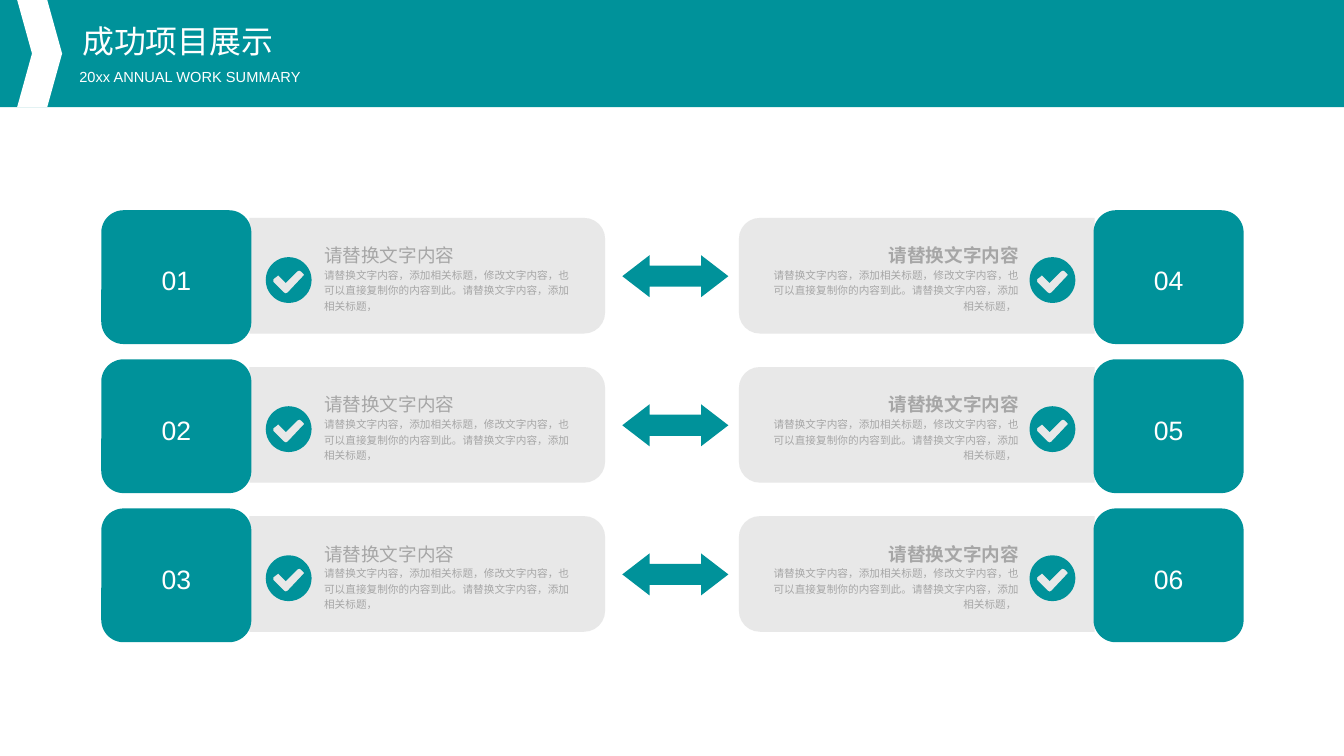
import math

from lxml import etree
from pptx import Presentation
from pptx.dml.color import RGBColor
from pptx.enum import shapes, text
from pptx.oxml.ns import qn
from pptx.util import Inches, Pt

TITLE = "成功项目展示"
SUBTITLE = "20xx ANNUAL WORK SUMMARY"
ITEM_TITLE = "请替换文字内容"
ITEM_BODY = "请替换文字内容，添加相关标题，修改文字内容，也可以直接复制你的内容到此。请替换文字内容，添加相关标题，"
ROWS = [("01", "04"), ("02", "05"), ("03", "06")]

TEAL = RGBColor(0x00, 0x92, 0x9A)
WHITE = RGBColor(0xFF, 0xFF, 0xFF)
PANEL_GRAY = RGBColor(0xE6, 0xE6, 0xE6)
TEXT_GRAY = RGBColor(0xA6, 0xA6, 0xA6)

SLIDE_WIDTH, SLIDE_HEIGHT = 14.06, 7.91
HEADER_HEIGHT = 1.12
FIRST_ROW, ROW_PITCH = 2.2, 1.56
TILE_WIDTH, TILE_HEIGHT = 1.57, 1.4
PANEL_WIDTH, PANEL_HEIGHT, PANEL_RADIUS = 3.72, 1.21, 0.22
ICON_RADIUS = 0.24
UNITS_PER_INCH = 1000  # freeform points are whole numbers
# Tick outline, measured from the centre of its disc
TICK = [(0.16, -0.06), (0.13, -0.09), (0.11, -0.1), (0.09, -0.09),
        (-0.03, 0.03), (-0.1, -0.04), (-0.11, -0.05), (-0.12, -0.04),
        (-0.16, -0.01), (-0.16, 0.02), (-0.05, 0.13), (-0.03, 0.14),
        (-0.01, 0.13), (0.15, -0.04), (0.16, -0.05)]

presentation = Presentation()
presentation.slide_width = Inches(SLIDE_WIDTH)
presentation.slide_height = Inches(SLIDE_HEIGHT)
slide = presentation.slides.add_slide(presentation.slide_layouts[6])


def paint(shape, color):
    shape.shadow.inherit = False
    shape.fill.solid()
    shape.fill.fore_color.rgb = color
    shape.line.fill.background()
    return shape


def add_preset(kind, left, top, width, height, color, adjustments=()):
    shape = slide.shapes.add_shape(
        kind, Inches(left), Inches(top), Inches(width), Inches(height))
    for index, value in enumerate(adjustments):
        shape.adjustments[index] = value
    return paint(shape, color)


def add_outline(contours, color):
    """Draw closed contours as one shape; an inner contour is a hole."""
    first, *others = [[(x * UNITS_PER_INCH, y * UNITS_PER_INCH)
                       for x, y in contour] for contour in contours]
    builder = slide.shapes.build_freeform(
        *first[0], scale=Inches(1) / UNITS_PER_INCH)
    builder.add_line_segments(first[1:])
    for contour in others:
        builder.move_to(*contour[0])
        builder.add_line_segments(contour[1:])
    return paint(builder.convert_to_shape(), color)


def arc(center_x, center_y, radius, start, end, steps):
    angles = [math.radians(start + (end - start) * step / steps)
              for step in range(steps + 1)]
    return [(center_x + radius * math.cos(angle),
             center_y + radius * math.sin(angle)) for angle in angles]


def write(shape, runs, color=WHITE, align=text.PP_ALIGN.LEFT, spacing=0.9,
          before=0, after=0, anchor=text.MSO_ANCHOR.TOP):
    """Fill a shape with one line per (text, size, bold, font) run."""
    frame = shape.text_frame
    frame.word_wrap = True
    frame.vertical_anchor = anchor
    frame.margin_left = frame.margin_right = 0
    frame.margin_top = frame.margin_bottom = 0
    paragraph = frame.paragraphs[0]
    paragraph.alignment = align
    paragraph.line_spacing = spacing
    paragraph.space_before, paragraph.space_after = Pt(before), Pt(after)
    for index, (words, size, bold, font) in enumerate(runs):
        if index:
            paragraph.add_line_break()
        run = paragraph.add_run()
        run.text = words
        run.font.size, run.font.bold, run.font.name = Pt(size), bold, font
        run.font.color.rgb = color


def add_text(left, top, width, height, runs, **style):
    box = slide.shapes.add_textbox(
        Inches(left), Inches(top), Inches(width), Inches(height))
    write(box, runs, **style)
    box.text_frame.auto_size = text.MSO_AUTO_SIZE.SHAPE_TO_FIT_TEXT


def add_panel(left, top, on_right):
    """Draw a panel whose corners are rounded on the side facing the arrow."""
    right, bottom = left + PANEL_WIDTH, top + PANEL_HEIGHT
    radius = PANEL_RADIUS
    outline = ([(left, top)]
               + arc(right - radius, top + radius, radius, -90, 0, 6)
               + arc(right - radius, bottom - radius, radius, 0, 90, 6)
               + [(left, bottom)])
    if on_right:
        outline = [(left + right - x, y) for x, y in outline]
    panel = add_outline([outline], PANEL_GRAY)
    color = panel.element.spPr.find(qn("a:solidFill"))[0]
    etree.SubElement(color, qn("a:alpha"), val="90000")


def add_check_icon(left, top):
    center_x, center_y = left + ICON_RADIUS, top + ICON_RADIUS
    disc = arc(center_x, center_y, ICON_RADIUS, 0, 350, 35)
    tick = [(center_x + x, center_y + y) for x, y in TICK]
    add_outline([disc, tick], TEAL)


def add_item(number, row_top, on_right):
    tile_left, panel_left, icon_left, text_left = (
        (11.44, 7.73, 10.77, 8.08) if on_right else (1.06, 2.61, 2.78, 3.39))
    add_panel(panel_left, row_top + 0.08, on_right)
    add_check_icon(icon_left, row_top + 0.49)
    add_text(text_left, row_top + 0.31, 2.58, 0.77,
             [(ITEM_TITLE, 14, on_right, "Arial"),
              (ITEM_BODY + (" " if on_right else ""), 8, False, "Arial")],
             color=TEXT_GRAY, spacing=1.2, before=2.8,
             align=text.PP_ALIGN.RIGHT if on_right else text.PP_ALIGN.LEFT)
    tile = add_preset(shapes.MSO_SHAPE.ROUNDED_RECTANGLE, tile_left, row_top,
                      TILE_WIDTH, TILE_HEIGHT, TEAL)
    write(tile, [(number, 20, False, "Arial")], align=text.PP_ALIGN.CENTER,
          spacing=1.2, after=7, anchor=text.MSO_ANCHOR.MIDDLE)


add_preset(shapes.MSO_SHAPE.RECTANGLE, 0, 0, SLIDE_WIDTH, HEADER_HEIGHT, TEAL)
add_preset(shapes.MSO_SHAPE.CHEVRON, 0.18, 0, 0.47, HEADER_HEIGHT, WHITE, [0.33])
add_text(0.86, 0.27, 3.45, 0.36, [(TITLE, 24, False, "Roboto Condensed")])
add_text(0.83, 0.73, 3.48, 0.17, [(SUBTITLE, 11, False, "Arial")])

for row, numbers in enumerate(ROWS):
    row_top = FIRST_ROW + row * ROW_PITCH
    add_preset(shapes.MSO_SHAPE.LEFT_RIGHT_ARROW, 6.51, row_top + 0.47,
               1.11, 0.44, TEAL, [0.5, 0.65])
    for side, number in enumerate(numbers):
        add_item(number, row_top, on_right=bool(side))

presentation.save("out.pptx")
